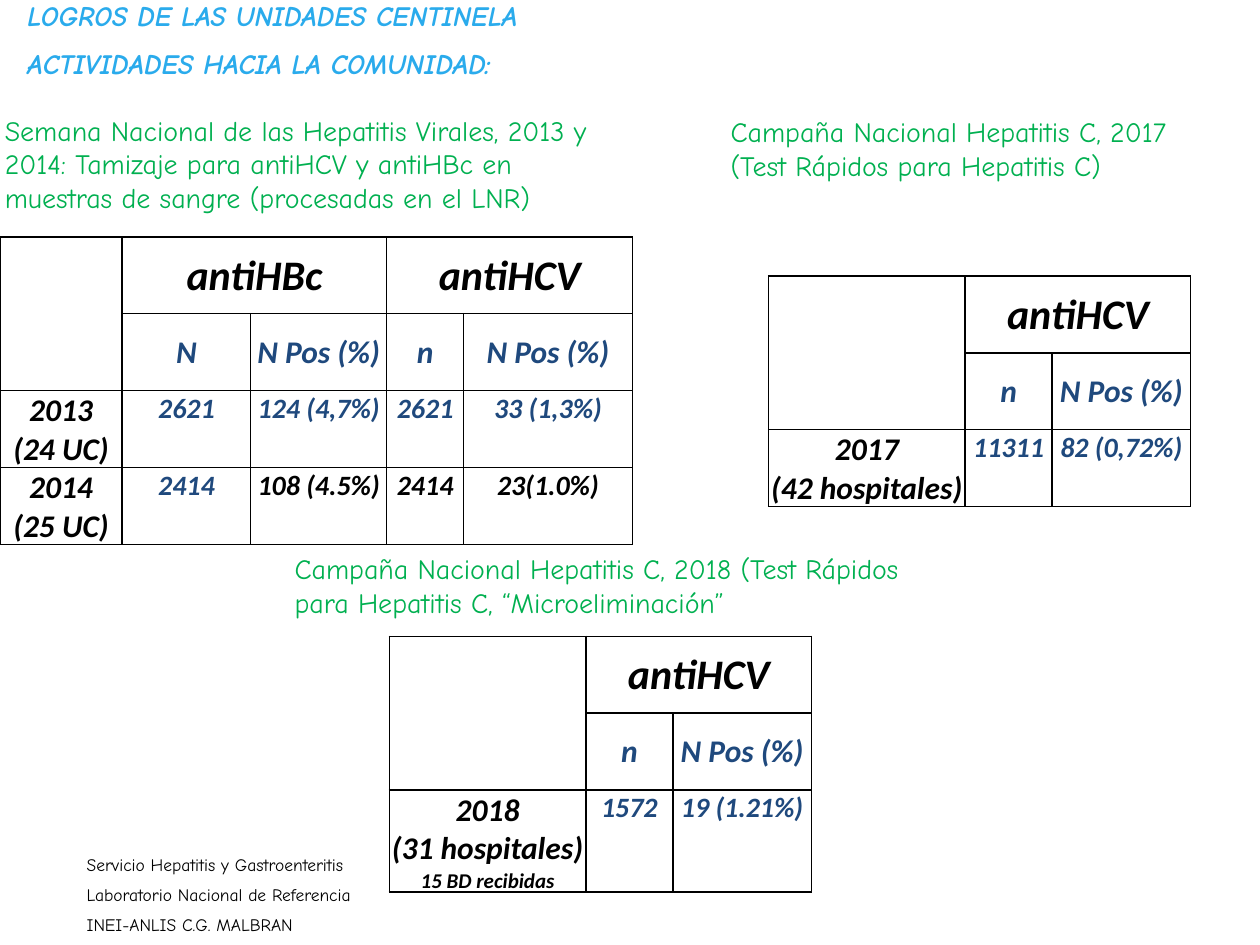
from pptx import Presentation
from pptx.dml.color import RGBColor
from pptx.enum.text import MSO_ANCHOR, MSO_AUTO_SIZE, PP_ALIGN
from pptx.oxml import parse_xml
from pptx.oxml.ns import nsdecls
from pptx.util import Inches, Pt

COLORS = {"black": "000000", "sky": "2AABEC", "green": "00B050", "navy": "1F497D"}
UNIT = 0.1
ROW = 6.1


def grid(n):
    return Inches(n * UNIT)


class Deck:
    def __init__(self, prs):
        self.slide = prs.slides.add_slide(prs.slide_layouts[6])

    def fill_text(self, tf, lines, sizes, color, font, strong=False, gap=0, align=None):
        tf.text = "\n".join(lines)
        for i, (p, size) in enumerate(zip(tf.paragraphs, sizes)):
            p.alignment = align
            p.space_before = Pt(gap if i else 0)
            for r in p.runs:
                r.font.name = font
                r.font.size = Pt(size)
                r.font.bold = r.font.italic = strong
                r.font.color.rgb = RGBColor.from_string(COLORS[color])

    def text(self, box, lines, size, color, strong=False):
        tf = self.slide.shapes.add_textbox(*map(grid, box)).text_frame
        tf.word_wrap = True
        tf.auto_size = MSO_AUTO_SIZE.SHAPE_TO_FIT_TEXT
        self.fill_text(tf, lines, [size] * len(lines), color, "Comic Neue", strong, size / 2)

    def cell(self, cell, lines, sizes, color="black", anchor=MSO_ANCHOR.TOP):
        cell.vertical_anchor = anchor
        self.fill_text(cell.text_frame, lines, sizes, color, "Calibri", True,
                       align=PP_ALIGN.CENTER)

    def border(self, cell):
        cell.margin_left = cell.margin_right = cell.margin_top = Inches(0.01)
        cell.margin_bottom = 0
        cell.fill.background()
        tc_pr = cell._tc.get_or_add_tcPr()
        for i, side in enumerate("LRTB"):
            tc_pr.insert(i, parse_xml(
                f'<a:ln{side} {nsdecls("a")} w="12700"><a:solidFill>'
                f'<a:srgbClr val="{COLORS["black"]}"/></a:solidFill></a:ln{side}>'))

    def table(self, left, top, widths, groups, heads, records, last_row=ROW):
        heights = [ROW] * (len(records) + 1) + [last_row]
        frame = self.slide.shapes.add_table(
            len(heights), len(widths), grid(left), grid(top),
            grid(sum(widths)), grid(sum(heights)))
        tbl = frame.table
        tbl.first_row = tbl.horz_banding = False
        for col, width in zip(tbl.columns, widths):
            col.width = grid(width)
        for row, height in zip(tbl.rows, heights):
            row.height = grid(height)
        for cell in tbl.iter_cells():
            self.border(cell)
        tbl.cell(0, 0).merge(tbl.cell(1, 0))
        for i, group in enumerate(groups):
            c = 1 + 2 * i
            tbl.cell(0, c).merge(tbl.cell(0, c + 1))
            self.cell(tbl.cell(0, c), [group], [24], anchor=MSO_ANCHOR.MIDDLE)
        for c, head in enumerate(heads, 1):
            self.cell(tbl.cell(1, c), [head], [18], "navy", MSO_ANCHOR.MIDDLE)
        for r, (label, values, navy_count) in enumerate(records, 2):
            self.cell(tbl.cell(r, 0), label, [18, 18, 12])
            for c, value in enumerate(values, 1):
                color = "navy" if c <= navy_count else "black"
                self.cell(tbl.cell(r, c), [value], [16], color)


def main():
    prs = Presentation()
    prs.slide_width, prs.slide_height = grid(100), grid(75)
    s = Deck(prs)

    s.text((5.9, 67.3, 35, 7.7),
           ["Servicio Hepatitis y Gastroenteritis", "Laboratorio Nacional de Referencia",
            "INEI-ANLIS C.G. MALBRAN"], 10, "black")
    s.text((1.2, -0.6, 74, 11.8),
           ["LOGROS DE LAS UNIDADES CENTINELA", "ACTIVIDADES HACIA LA COMUNIDAD:"],
           16, "sky", True)
    s.text((-0.6, 8.5, 50.8, 9.1),
           ["Semana Nacional de las Hepatitis Virales, 2013 y 2014: Tamizaje para antiHCV "
            "y antiHBc en muestras de sangre (procesadas en el LNR)"], 16, "green")
    s.text((57, 8.6, 40.2, 7.1),
           ["Campaña Nacional Hepatitis C, 2017 (Test Rápidos para Hepatitis C)"],
           16, "green")
    s.text((22.4, 43.3, 50.4, 10.4),
           ["Campaña Nacional Hepatitis C, 2018 (Test Rápidos para Hepatitis C, "
            "“Microeliminación”"], 16, "green")

    s.table(0, 18.8, [9.7, 10.2, 10.8, 6.1, 13.4], ["antiHBc", "antiHCV"],
            ["N", "N Pos (%)", "n", "N Pos (%)"],
            [(["2013", "(24 UC)"], ["2621", "124 (4,7%)", "2621", "33 (1,3%)"], 4),
             (["2014", "(25 UC)"], ["2414", "108 (4.5%)", "2414", "23(1.0%)"], 1)])
    campaigns = [
        (61, 21.9, ["2017", "(42 hospitales)"], ["11311", "82 (0,72%)"], ROW),
        (30.9, 50.5, ["2018", "(31 hospitales)", "15 BD recibidas"],
         ["1572", "19 (1.21%)"], 8.1),
    ]
    for left, top, label, values, last_row in campaigns:
        s.table(left, top, [15.6, 6.9, 11], ["antiHCV"], ["n", "N Pos (%)"],
                [(label, values, 2)], last_row)

    prs.save("out.pptx")


if __name__ == "__main__":
    main()
